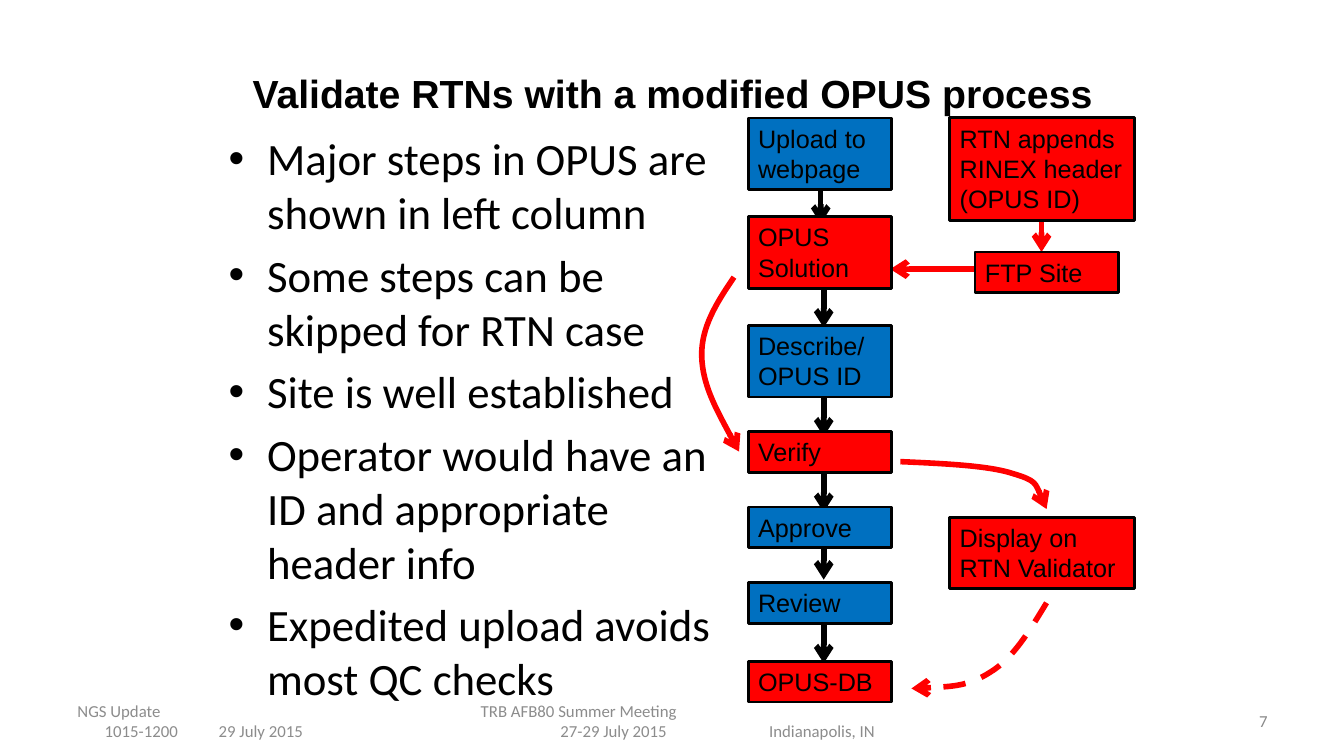
import pptx
import pptx.util
import pptx.dml.color
import pptx.enum.dml
import pptx.enum.shapes
import pptx.enum.text
import pptx.oxml
import pptx.oxml.ns
from lxml import etree

Inches = pptx.util.Inches
Pt = pptx.util.Pt
qn = pptx.oxml.ns.qn
ALIGN = pptx.enum.text.PP_ALIGN
ANCHOR = pptx.enum.text.MSO_ANCHOR

COLORS = {"red": "FF0000", "blue": "0070C0", "black": "000000",
          "footer": "8C8C8C", "number": "898989"}

TITLE = "Validate RTNs with a modified OPUS process"
BULLETS = [
    "Major steps in OPUS are shown in left column",
    "Some steps can be skipped for RTN case",
    "Site is well established",
    "Operator would have an ID and appropriate header info",
    "Expedited upload avoids most QC checks",
]
OPUS_STEPS = [
    ("Upload to webpage", "blue", 1.17, 2),
    ("OPUS Solution", "red", 2.15, 2),
    ("Describe/ OPUS ID", "blue", 3.23, 2),
    ("Verify", "red", 4.28, 1),
    ("Approve", "blue", 5.03, 1),
    ("Review", "blue", 5.78, 1),
    ("OPUS-DB", "red", 6.56, 1),
]
RTN_STEPS = [
    (["RTN appends RINEX header", "(OPUS ID)"], 9.42, 1.17, 1.83, 3),
    (["FTP Site"], 9.67, 2.5, 1.42, 1),
    (["Display on RTN Validator"], 9.42, 5.13, 1.83, 2),
]
STEP_LEFT, STEP_WIDTH = 7.42, 1.42
LINE_HEIGHT, BOX_PADDING = 0.305, 0.1
ARROW_LENGTH = 0.58
DOWN_ARROWS = [(8.17, 6), (8.17, 5.17), (8.17, 4.5), (8.17, 3.75), (8.17, 2.67), (8.14, 1.64)]
RTN_ARROWS = [((10.33, 2.67), (8.83, 2.67)), ((10.33, 1.92), (10.33, 2.5))]
CURVES = [
    ([(7.28, 2.75), (7.11, 3), (6.95, 3.25), (6.96, 3.54),
      (6.97, 3.82), (7.15, 4.15), (7.33, 4.48)], False),
    ([(8.93, 4.58), (9.37, 4.6), (9.81, 4.62), (10.05, 4.7),
      (10.29, 4.77), (10.33, 4.91), (10.38, 5.05)], False),
    ([(10.38, 5.98), (10.21, 6.26), (10.05, 6.53), (9.82, 6.67),
      (9.6, 6.81), (9.32, 6.82), (9.04, 6.83)], True),
]
FOOTERS = [
    (0.67, 3.11, [("NGS Update", 0), ("1015-1200\t29 July 2015", 0.27)], 1.13),
    (4.56, 4.22, [("TRB AFB80 Summer Meeting", 0.11),
                  ("27-29 July 2015\tIndianapolis, IN", 0.9)], 2.07),
]
FOOTER_TOP, FOOTER_HEIGHT = 6.95, 0.4
SLIDE_NUMBER = "7"

deck = pptx.Presentation()
deck.slide_width, deck.slide_height = Inches(13.33), Inches(7.5)
slide = deck.slides.add_slide(deck.slide_layouts[6])


def rgb(color):
    return pptx.dml.color.RGBColor.from_string(COLORS[color])


def write(frame, lines, size=18, font="Arial", color="black", bold=False,
          align=ALIGN.LEFT, anchor=ANCHOR.TOP, bullet=False, space=0,
          indents=None, tab=None):
    frame.word_wrap = True
    frame.vertical_anchor = anchor
    for index, line in enumerate(lines):
        paragraph = frame.paragraphs[0] if index == 0 else frame.add_paragraph()
        paragraph.text = line
        paragraph.alignment = align
        paragraph.space_before = Pt(space if index else 0)
        properties = paragraph._p.get_or_add_pPr()
        if bullet:
            properties.set("marL", str(Inches(0.38)))
            properties.set("indent", str(Inches(-0.38)))
            etree.SubElement(properties, qn("a:buFont")).set("typeface", "Arial")
            etree.SubElement(properties, qn("a:buChar")).set("char", "•")
        if indents:
            properties.set("marL", str(Inches(indents[index])))
        if tab and "\t" in line:
            stops = etree.SubElement(properties, qn("a:tabLst"))
            stop = etree.SubElement(stops, qn("a:tab"))
            stop.set("pos", str(Inches(tab)))
            stop.set("algn", "l")
        for run in paragraph.runs:
            run.font.size = Pt(size)
            run.font.name = font
            run.font.bold = bold
            run.font.color.rgb = rgb(color)


def add_text(left, top, width, height, lines, **style):
    box = slide.shapes.add_textbox(*map(Inches, (left, top, width, height)))
    write(box.text_frame, lines, **style)


def add_step(lines, color, left, top, width, rows):
    height = rows * LINE_HEIGHT + BOX_PADDING
    step = slide.shapes.add_shape(pptx.enum.shapes.MSO_SHAPE.RECTANGLE,
                                  *map(Inches, (left, top, width, height)))
    step.shadow.inherit = False
    step.fill.solid()
    step.fill.fore_color.rgb = rgb(color)
    step.line.color.rgb = rgb("black")
    step.line.width = Pt(2)
    write(step.text_frame, lines)


def style_arrow(arrow, color, dashed=False):
    arrow.line.color.rgb = rgb(color)
    arrow.line.width = Pt(4)
    if dashed:
        arrow.line.dash_style = pptx.enum.dml.MSO_LINE.DASH
    etree.SubElement(arrow.line._get_or_add_ln(), qn("a:tailEnd")).set("type", "arrow")


def add_arrow(start, end, color):
    arrow = slide.shapes.add_connector(pptx.enum.shapes.MSO_CONNECTOR.STRAIGHT,
                                       *map(Inches, start + end))
    style_arrow(arrow, color)
    etree.SubElement(arrow._element.spPr, qn("a:effectLst"))


def add_curve(points, dashed):
    start, *rest = [(Inches(x), Inches(y)) for x, y in points]
    builder = slide.shapes.build_freeform(*start)
    builder.add_line_segments(rest, close=False)
    curve = builder.convert_to_shape()
    curve.shadow.inherit = False
    curve.fill.background()
    outline = next(curve._element.iter(qn("a:path")))
    segments = outline.findall(qn("a:lnTo"))
    for first in range(0, len(segments), 3):
        bezier = etree.SubElement(outline, qn("a:cubicBezTo"))
        for segment in segments[first:first + 3]:
            bezier.append(segment[0])
            outline.remove(segment)
    style_arrow(curve, "red", dashed)


for start, end in RTN_ARROWS:
    add_arrow(start, end, "red")
for x, y in DOWN_ARROWS:
    add_arrow((x, y), (x, y + ARROW_LENGTH), "black")

add_text(0.67, 0.3, 12, 1.25, [TITLE], size=28, bold=True,
         align=ALIGN.CENTER, anchor=ANCHOR.MIDDLE)
add_text(2.17, 1.25, 4.98, 4.95, BULLETS, size=32, font="Calibri",
         bullet=True, space=6.4)

for label, color, top, rows in OPUS_STEPS:
    add_step([label], color, STEP_LEFT, top, STEP_WIDTH, rows)
for lines, left, top, width, rows in RTN_STEPS:
    add_step(lines, "red", left, top, width, rows)
for points, dashed in CURVES:
    add_curve(points, dashed)

for left, width, entries, tab in FOOTERS:
    lines, indents = zip(*entries)
    add_text(left, FOOTER_TOP, width, FOOTER_HEIGHT, lines, size=12, font="Calibri",
             color="footer", anchor=ANCHOR.MIDDLE, indents=indents, tab=tab)
add_text(9.56, FOOTER_TOP, 3.11, FOOTER_HEIGHT, [SLIDE_NUMBER], size=12, font="Calibri",
         color="number", align=ALIGN.RIGHT, anchor=ANCHOR.MIDDLE)

deck.save("out.pptx")
